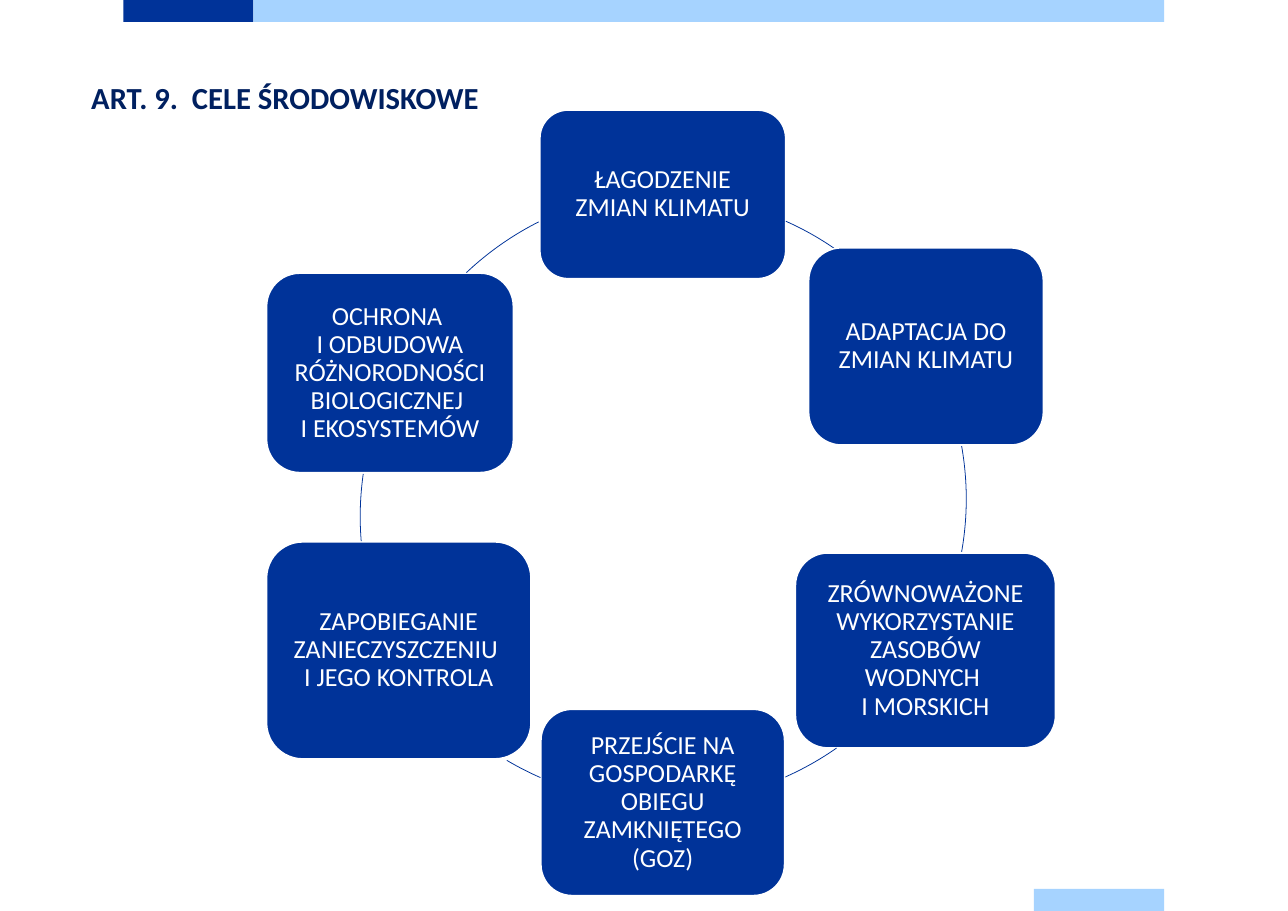
from copy import deepcopy
from dataclasses import dataclass

from pptx import Presentation, util as u
from pptx.dml.color import RGBColor
from pptx.enum import shapes, text
from pptx.oxml.ns import qn


@dataclass(frozen=True)
class Theme:
    font: str = "Calibri"
    navy: str = "003399"
    sky: str = "A6D3FF"
    title: str = "002060"
    white: str = "FFFFFF"
    title_size: float = 20
    card_size: float = 17
    card_line: float = 1
    arc_line: float = 0.5
    card_pad: float = 0.6


def write(tf, content, *, font, size, color, bold=False, align=None, spacing=None):
    tf.word_wrap = True
    p = tf.paragraphs[0]
    p.text = content
    p.alignment = align
    p.line_spacing = spacing
    for r in p.runs:
        r.font.name = font
        r.font.size = u.Pt(size)
        r.font.bold = bold
        r.font.color.rgb = RGBColor.from_string(color)
    for br in p._p.findall(qn("a:br")):
        br.append(deepcopy(p.runs[0]._r.rPr))


class Deck:
    def __init__(self, theme, width, height):
        self.theme = theme
        self.prs = Presentation()
        self.prs.slide_width = u.Inches(width)
        self.prs.slide_height = u.Inches(height)
        self.s = self.prs.slides.add_slide(self.prs.slide_layouts[6])

    def x(self, share):
        return round(self.prs.slide_width * share / 100)

    def y(self, share):
        return round(self.prs.slide_height * share / 100)

    def box(self, left, top, width, height):
        return self.x(left), self.y(top), self.x(width), self.y(height)

    def shape(self, kind, box, fill=None, line=None, weight=1):
        sp = self.s.shapes.add_shape(kind, *box)
        sp.shadow.inherit = False
        if fill:
            sp.fill.solid()
            sp.fill.fore_color.rgb = RGBColor.from_string(fill)
        else:
            sp.fill.background()
        if line:
            sp.line.color.rgb = RGBColor.from_string(line)
            sp.line.width = u.Pt(weight)
        else:
            sp.line.fill.background()
        return sp

    def bar(self, column, span, top, fill):
        left, step, height = 9.58, 10.1, 2.42
        box = self.box(left + column * step, top, span * step, height)
        self.shape(shapes.MSO_SHAPE.RECTANGLE, box, fill)

    def title(self, content, *place):
        t = self.theme
        tf = self.s.shapes.add_textbox(*self.box(*place)).text_frame
        write(tf, content, font=t.font, size=t.title_size, color=t.title, bold=True)
        tf.auto_size = text.MSO_AUTO_SIZE.SHAPE_TO_FIT_TEXT

    def card(self, content, *place):
        t = self.theme
        sp = self.shape(shapes.MSO_SHAPE.ROUNDED_RECTANGLE, self.box(*place),
                        t.navy, t.white, t.card_line)
        tf = sp.text_frame
        tf.vertical_anchor = text.MSO_ANCHOR.MIDDLE
        pad = self.x(t.card_pad)
        tf.margin_left = tf.margin_right = tf.margin_top = tf.margin_bottom = pad
        write(tf, content, font=t.font, size=t.card_size, color=t.white,
              align=text.PP_ALIGN.CENTER, spacing=0.9)

    def arc(self, left, top, start, end):
        t = self.theme
        side = self.x(47.22)
        sp = self.shape(shapes.MSO_SHAPE.ARC, (self.x(left), self.y(top), side, side),
                        line=t.navy, weight=t.arc_line)
        degree = 0.6
        sp.adjustments[0] = start * degree
        sp.adjustments[1] = end * degree


RING = (27.8, 21.4)
GOALS = [
    ("ŁAGODZENIE ZMIAN KLIMATU",
     (41.92, 12.09, 19.08, 18.5), RING, (294, 304.4)),
    ("ADAPTACJA DO ZMIAN KLIMATU",
     (62.79, 27.21, 18.22, 21.64), RING, (350, 10)),
    ("ZRÓWNOWAŻONE WYKORZYSTANIE ZASOBÓW WODNYCH \nI MORSKICH",
     (61.76, 60.7, 20.19, 21.4), RING, (55, 66.2)),
    ("PRZEJŚCIE NA GOSPODARKĘ OBIEGU ZAMKNIĘTEGO (GOZ)",
     (42, 77.87, 18.91, 20.44), RING, (113.6, 120.7)),
    ("ZAPOBIEGANIE ZANIECZYSZCZENIU \nI JEGO KONTROLA",
     (20.7, 59.49, 20.53, 23.82), (27.97, 23.34), (175.4, 188.1)),
    ("OCHRONA \nI ODBUDOWA RÓŻNORODNOŚCI BIOLOGICZNEJ \nI EKOSYSTEMÓW",
     (20.7, 29.99, 19.16, 21.89), (28.83, 20.8), (226.6, 243.3)),
]


def main():
    theme = Theme()
    deck = Deck(theme, 11.69, 8.27)
    deck.bar(0, 1, 0, theme.navy)
    deck.bar(1, 7, 0, theme.sky)
    deck.bar(7, 1, 97.58, theme.sky)
    deck.title("ART. 9.  CELE ŚRODOWISKOWE", 6.24, 8.1, 50.56, 5.32)
    for goal, place, ring, angles in GOALS:
        deck.card(goal, *place)
        deck.arc(*ring, *angles)
    deck.prs.save("out.pptx")


if __name__ == "__main__":
    main()
